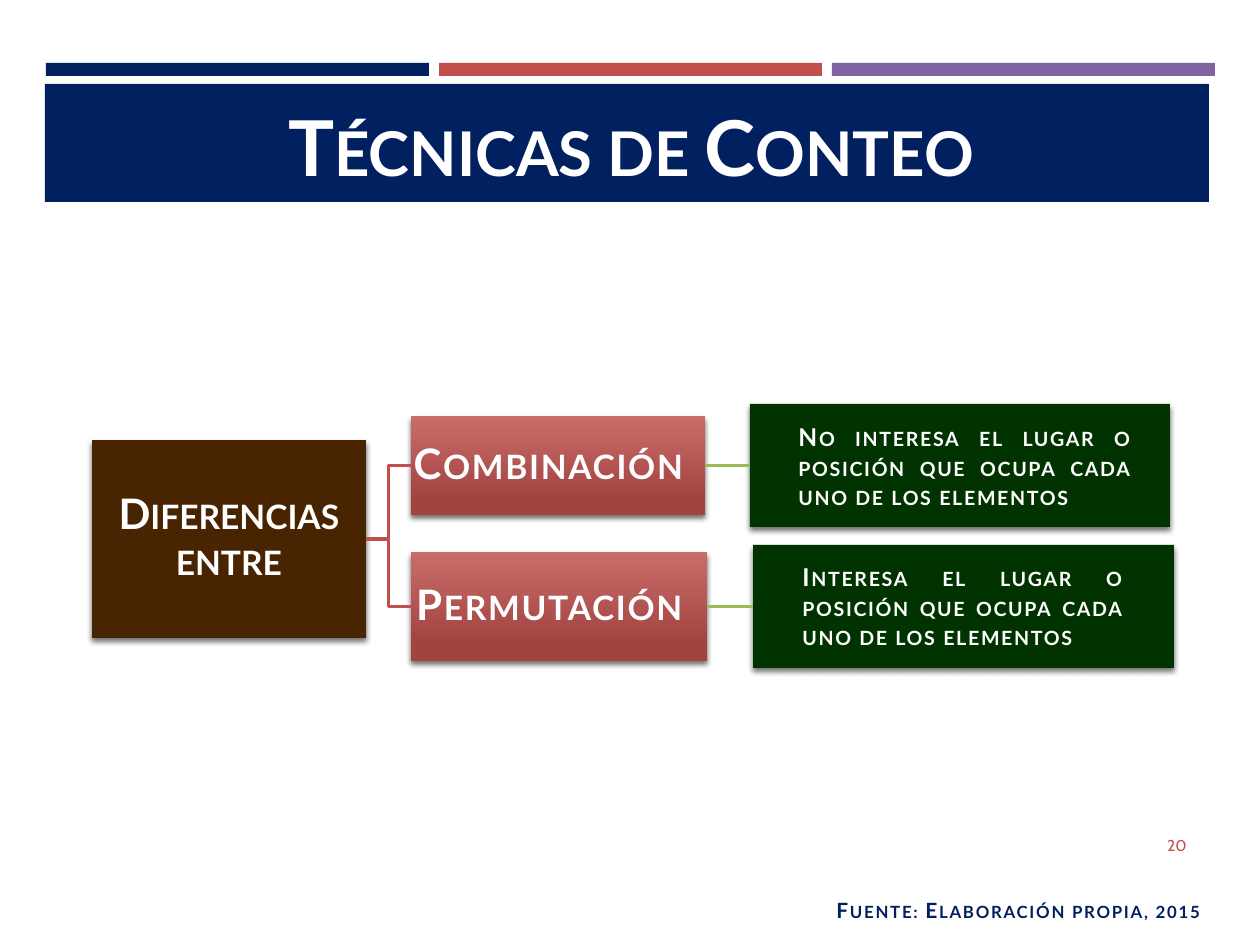
from lxml import etree
from pptx import Presentation
from pptx.dml.color import RGBColor
from pptx.enum.shapes import MSO_CONNECTOR, MSO_SHAPE
from pptx.enum.text import MSO_ANCHOR, PP_ALIGN
from pptx.oxml.ns import qn
from pptx.util import Pt

RECT = MSO_SHAPE.RECTANGLE
STRAIGHT, ELBOW = MSO_CONNECTOR.STRAIGHT, MSO_CONNECTOR.ELBOW
CENTER, RIGHT, JUSTIFY = PP_ALIGN.CENTER, PP_ALIGN.RIGHT, PP_ALIGN.JUSTIFY
TOP, MIDDLE = MSO_ANCHOR.TOP, MSO_ANCHOR.MIDDLE
LEFT_SIDE, RIGHT_SIDE = 1, 3
PX = 914400 / 126

COLORS = {
    "navy": "002060", "red": "C0504D", "purple": "8064A2", "white": "FFFFFF",
    "brown": "482400", "forest": "003300", "lime": "9BBB59",
    "rose": "C96D6B", "brick": "A24340", "black": "000000",
}
STRIPES = ["navy", "red", "purple"]
STRIPE_LEFT, STRIPE_TOP, STRIPE_WIDTH, STRIPE_HEIGHT, STRIPE_STEP = 46, 63, 383, 13, 393
BANNER = (45, 84, 1164, 118)
TITLE = ("Técnicas de Conteo", (256, 91, 750, 110))
ROOT = ("Diferencias entre", (92, 440, 274, 198))
BRANCHES = [
    {"name": ("Combinación", (411, 416, 294, 99)),
     "panel": (750, 404, 420, 123),
     "detail": ("No interesa el lugar o posición que ocupa cada uno de los elementos",
                (786, 416, 358, 102))},
    {"name": ("Permutación", (411, 552, 296, 109)),
     "panel": (753, 545, 421, 123),
     "detail": ("Interesa el lugar o posición que ocupa cada uno de los elementos",
                (790, 556, 346, 102))},
]
CREDIT = ("Fuente: Elaboración propia, 2015", (824, 891, 416, 38))
PAGE = ("20", (1091, 820, 108, 50))
NODE_MARGIN = 2


def color(name):
    return RGBColor.from_string(COLORS[name])


def emu(*lengths):
    return [round(length * PX) for length in lengths]


def add_effects(shape, shadow=False):
    effects = etree.SubElement(shape._element.spPr, qn("a:effectLst"))
    if shadow:
        outer = etree.SubElement(effects, qn("a:outerShdw"), blurRad="38100", dist="25400",
                                 dir="5400000", rotWithShape="0")
        tint = etree.SubElement(outer, qn("a:srgbClr"), val=COLORS["black"])
        etree.SubElement(tint, qn("a:alpha"), val="55000")


def add_box(slide, box, fills, shadow=False):
    shape = slide.shapes.add_shape(RECT, *emu(*box))
    shape.line.fill.background()
    if len(fills) == 1:
        shape.fill.solid()
        shape.fill.fore_color.rgb = color(fills[0])
    else:
        shape.fill.gradient()
        shape.fill.gradient_angle = 270
        for stop, name, position in zip(shape.fill.gradient_stops, fills, (0, 0.84)):
            stop.color.rgb = color(name)
            stop.position = position
    if shadow:
        add_effects(shape, True)
    else:
        shape.shadow.inherit = False
    return shape


def write(shape, text, size, ink="white", align=CENTER, anchor=MIDDLE, spacing=0,
          caps=True, font="Lato", margin=None, line_spacing=None):
    frame = shape.text_frame
    frame.word_wrap = True
    frame.vertical_anchor = anchor
    if margin is not None:
        for side in ("left", "top", "right", "bottom"):
            setattr(frame, f"margin_{side}", emu(margin)[0])
    paragraph = frame.paragraphs[0]
    paragraph.alignment = align
    if line_spacing:
        paragraph.line_spacing = line_spacing
    run = paragraph.add_run()
    run.text = text
    for key, value in {"size": Pt(size), "name": font, "bold": caps}.items():
        setattr(run.font, key, value)
    run.font.color.rgb = color(ink)
    properties = run._r.get_or_add_rPr()
    if caps:
        properties.set("cap", "small")
    if spacing:
        properties.set("spc", str(spacing * 100))


def add_text(slide, content, size, **style):
    text, box = content
    write(slide.shapes.add_textbox(*emu(*box)), text, size, **style)


def add_node(slide, content, fills, spacing=0):
    text, box = content
    node = add_box(slide, box, fills, shadow=True)
    write(node, text, 24, spacing=spacing, margin=NODE_MARGIN, line_spacing=0.9)
    return node


def link(slide, kind, source, target, ink):
    connector = slide.shapes.add_connector(kind, 0, 0, 0, 0)
    connector.begin_connect(source, RIGHT_SIDE)
    connector.end_connect(target, LEFT_SIDE)
    connector.line.color.rgb = color(ink)
    connector.line.width = Pt(1.75)
    add_effects(connector)


def main():
    deck = Presentation()
    deck.slide_width, deck.slide_height = emu(1260, 945)
    slide = deck.slides.add_slide(deck.slide_layouts[6])

    for index, name in enumerate(STRIPES):
        left = STRIPE_LEFT + index * STRIPE_STEP
        add_box(slide, (left, STRIPE_TOP, STRIPE_WIDTH, STRIPE_HEIGHT), [name])
    add_box(slide, BANNER, ["navy"])
    add_text(slide, TITLE, 44)

    root = add_node(slide, ROOT, ["brown"])
    for branch in BRANCHES:
        node = add_node(slide, branch["name"], ["rose", "brick"], spacing=1)
        panel = add_box(slide, branch["panel"], ["forest"], shadow=True)
        link(slide, ELBOW, root, node, "red")
        link(slide, STRAIGHT, node, panel, "lime")
        add_text(slide, branch["detail"], 14, align=JUSTIFY, anchor=TOP, spacing=1)

    add_text(slide, CREDIT, 12, ink="navy", spacing=1)
    add_text(slide, PAGE, 9, ink="red", align=RIGHT, caps=False, font="Cabin")
    deck.save("out.pptx")


if __name__ == "__main__":
    main()
